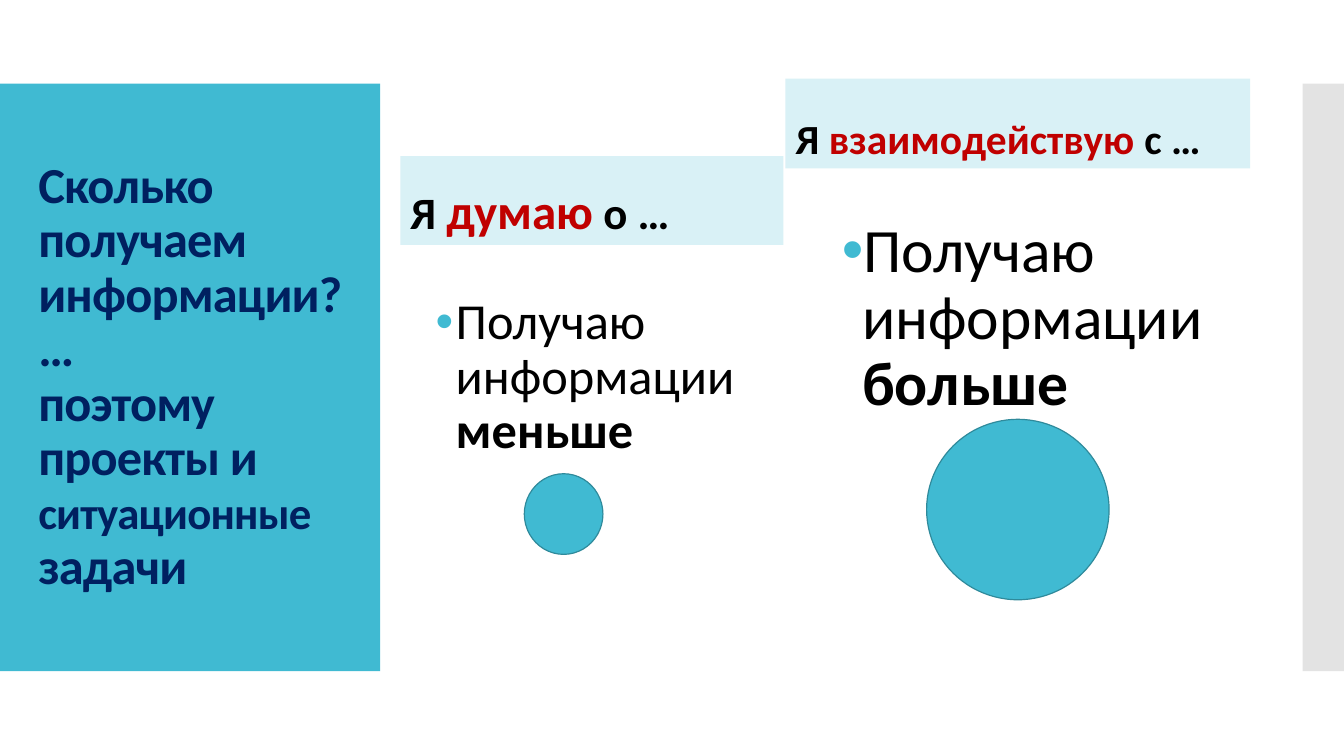
"""Build a slide comparing information gained by thinking and by interacting."""
from copy import deepcopy

from lxml.etree import SubElement
from pptx import Presentation
from pptx.dml.color import RGBColor
from pptx.enum.shapes import MSO_SHAPE
from pptx.enum.text import MSO_ANCHOR, MSO_AUTO_SIZE, PP_ALIGN
from pptx.oxml.ns import qn
from pptx.util import Inches, Pt

TEAL, PALE, NAVY, RED, BLACK = "40BAD2", "D9F1F6", "002060", "C00000", "000000"
FONT = "Calibri"

TITLE_BOX = (0.28, 1.23, 3.22, 5.03)
TITLE = [
    ("Сколько получаем информации? …\vпоэтому проекты и ", 36, NAVY, True),
    ("ситуационные", 32, NAVY, True),
    (" задачи", 36, NAVY, True),
]
COLUMNS = [
    {
        "heading_box": (3.97, 1.55, 3.8, 0.88),
        "heading": [("Я ", 32, BLACK, True), ("думаю", 35, RED, True), (" о …", 32, BLACK, True)],
        "body_box": (4.22, 2.72, 3.8, 3.95),
        "body": [("Получаю информации ", 36, BLACK, False), ("меньше", 36, BLACK, True)],
        "body_inset": 0.22,
        "circle": (5.2, 4.7, 0.78, 0.8),
    },
    {
        "heading_box": (7.79, 0.78, 4.61, 0.89),
        "heading": [("Я ", 29.6, BLACK, True), ("взаимодействую ", 29.6, RED, True),
                    ("с …", 29.6, BLACK, True)],
        "body_box": (8.25, 2.11, 4.1, 4.4),
        "body": [("Получаю информации ", 44, BLACK, False), ("больше", 44, BLACK, True)],
        "body_inset": 0.07,
        "circle": (9.19, 4.16, 1.81, 1.79),
    },
]
PANELS = [((0, 0.83, 3.77, 5.83), TEAL, 100), ((12.92, 0.83, 0.41, 5.83), "C8C8C8", 50)]


def color(hex_code):
    return RGBColor.from_string(hex_code)


def fill_shape(shape, hex_code):
    shape.fill.solid()
    shape.fill.fore_color.rgb = color(hex_code)


def add_filled_shape(slide, kind, box, hex_code):
    shape = slide.shapes.add_shape(kind, *map(Inches, box))
    shape.shadow.inherit = False
    fill_shape(shape, hex_code)
    return shape


def add_panel(slide, box, hex_code, opacity):
    panel = add_filled_shape(slide, MSO_SHAPE.RECTANGLE, box, hex_code)
    panel.line.fill.background()
    if opacity < 100:
        fill_color = panel.fill._xPr.find(qn("a:solidFill"))[0]
        SubElement(fill_color, qn("a:alpha"), val=str(opacity * 1000))


def add_bullet(paragraph):
    properties = paragraph._p.get_or_add_pPr()
    properties.set("marL", str(Inches(0.2)))
    properties.set("indent", str(Inches(-0.2)))
    bullet_color = SubElement(properties, qn("a:buClr"))
    SubElement(bullet_color, qn("a:srgbClr"), val=TEAL)
    SubElement(properties, qn("a:buFont"), typeface="Arial")
    SubElement(properties, qn("a:buChar"), char="•")


def write_text(shape, box, pieces, anchor, spacing=None):
    """Place a placeholder and write its formatted pieces as one paragraph."""
    shape.left, shape.top, shape.width, shape.height = map(Inches, box)
    frame = shape.text_frame
    frame.word_wrap = True
    frame.auto_size = MSO_AUTO_SIZE.NONE
    frame.vertical_anchor = anchor
    paragraph = frame.paragraphs[0]
    paragraph.alignment = PP_ALIGN.LEFT
    paragraph.line_spacing = 0.9
    paragraph.space_before = Pt(0)
    for text, size, hex_code, bold in pieces:
        for index, part in enumerate(text.split("\v")):
            if index:
                paragraph.add_line_break()
            run = paragraph.add_run()
            run.text = part
            run.font.name = FONT
            run.font.size = Pt(size)
            run.font.bold = bold
            run.font.color.rgb = color(hex_code)
            if spacing is not None:
                run.font._element.set("spc", str(spacing))
    for line_break in paragraph._p.findall(qn("a:br")):
        line_break.insert(0, deepcopy(paragraph.runs[0].font._element))
    return paragraph


def main():
    presentation = Presentation()
    presentation.slide_width = Inches(13.33)
    presentation.slide_height = Inches(7.5)
    slide = presentation.slides.add_slide(presentation.slide_layouts[4])
    title, *bodies = slide.placeholders

    for panel in PANELS:
        add_panel(slide, *panel)
    for placeholder in (title, *bodies):
        slide.shapes._spTree.append(placeholder._element)

    write_text(title, TITLE_BOX, TITLE, MSO_ANCHOR.MIDDLE, spacing=-60)
    for column, heading, body in zip(COLUMNS, bodies[::2], bodies[1::2]):
        write_text(heading, column["heading_box"], column["heading"], MSO_ANCHOR.BOTTOM)
        fill_shape(heading, PALE)
        paragraph = write_text(body, column["body_box"], column["body"], MSO_ANCHOR.TOP)
        body.text_frame.margin_top = Inches(column["body_inset"])
        add_bullet(paragraph)
        circle = add_filled_shape(slide, MSO_SHAPE.OVAL, column["circle"], TEAL)
        circle.line.color.rgb = color("2F8A9B")
        circle.line.width = Pt(0.85)

    presentation.save("out.pptx")


if __name__ == "__main__":
    main()
